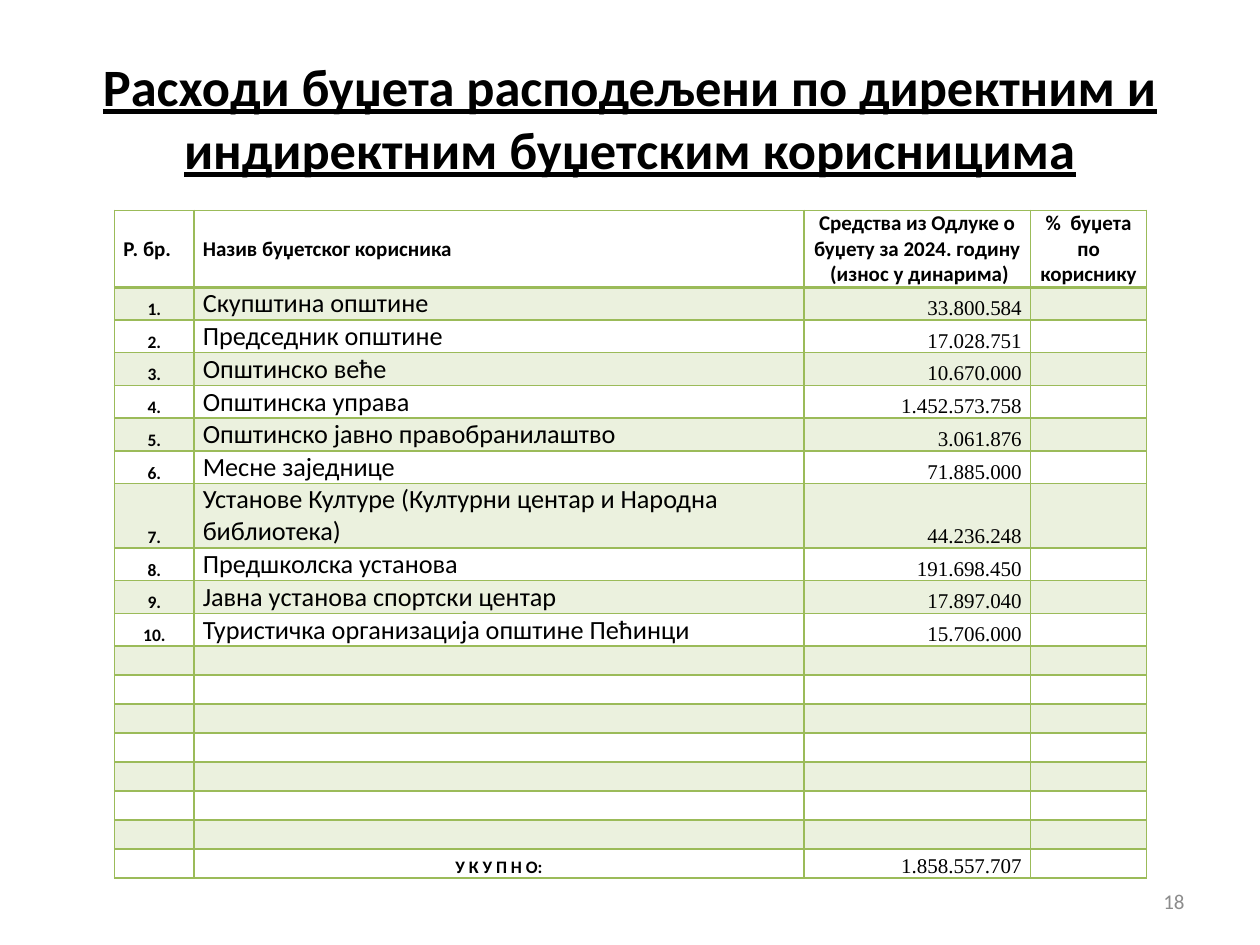
from dataclasses import dataclass

from lxml import etree
from pptx import Presentation
from pptx.dml.color import RGBColor
from pptx.enum.text import MSO_ANCHOR, PP_ALIGN
from pptx.oxml.ns import qn
from pptx.util import Inches, Pt

LEFT, CENTER, RIGHT = PP_ALIGN.LEFT, PP_ALIGN.CENTER, PP_ALIGN.RIGHT
MIDDLE, BOTTOM = MSO_ANCHOR.MIDDLE, MSO_ANCHOR.BOTTOM

BLACK = RGBColor(0x00, 0x00, 0x00)
GRAY = RGBColor(0x8C, 0x8C, 0x8C)
GREEN = RGBColor(0x9B, 0xBB, 0x59)
PALE = RGBColor(0xEB, 0xF1, 0xDE)


@dataclass(frozen=True)
class Style:
    size: float
    align: PP_ALIGN = LEFT
    font: str = "Calibri"
    bold: bool = False
    underline: bool = False
    color: RGBColor = BLACK


TITLE = Style(30, CENTER, bold=True, underline=True)
PAGE = Style(12, RIGHT, color=GRAY)
HEAD = Style(12, bold=True)
HEAD_MID = Style(12, CENTER, bold=True)
MARK = Style(10, CENTER, bold=True)
NAME = Style(15)
SUM = Style(12, RIGHT, "Times New Roman")

HEAD_ROW = ["Р. бр.", "Назив буџетског корисника",
            "Средства из Одлуке о буџету за 2024. годину  (износ у динарима)",
            "%  буџета по кориснику"]
USERS = [
    ("Скупштина општине", "33.800.584"),
    ("Председник општине", "17.028.751"),
    ("Општинско веће", "10.670.000"),
    ("Општинска управа", "1.452.573.758"),
    ("Општинско јавно правобранилаштво", "3.061.876"),
    ("Месне заједнице", "71.885.000"),
    ("Установе Културе (Културни центар и Народна библиотека)", "44.236.248"),
    ("Предшколска установа", "191.698.450"),
    ("Јавна установа спортски центар", "17.897.040"),
    ("Туристичка организација општине Пећинци", "15.706.000"),
]
TOTAL = ["", "У К У П Н О:", "1.858.557.707", ""]
SPARE = 7
COLS = [0.63, 4.84, 1.8, 0.92]
HEAD_H, USER_H, TALL_H, SPARE_H = 0.61, 0.26, 0.51, 0.23
TALL = 6


def write(frame, text: str, style: Style) -> None:
    para = frame.paragraphs[0]
    para.alignment = style.align
    font = para.font
    font.name, font.size = style.font, Pt(style.size)
    font.bold, font.underline = style.bold, style.underline
    font.color.rgb = style.color
    if text:
        para.add_run().text = text
    else:
        # An empty cell takes its line height from the end mark.
        etree.SubElement(para._p, qn("a:endParaRPr"), sz=str(style.size * 100))


def add_text(slide, box: tuple, text: str, style: Style) -> None:
    frame = slide.shapes.add_textbox(*map(Inches, box)).text_frame
    frame.word_wrap = True
    frame.vertical_anchor = MIDDLE
    write(frame, text, style)


def edge(cell, side: str, width: float) -> None:
    line = etree.SubElement(cell._tc.get_or_add_tcPr(), qn(f"a:ln{side}"),
                            w=str(Pt(width)))
    fill = etree.SubElement(line, qn("a:solidFill"))
    etree.SubElement(fill, qn("a:srgbClr"), val=str(GREEN))


def fill_row(table, row: int, texts: list, styles: list) -> None:
    """Write one row, with its borders and banding."""
    head = row == 0
    for col, (text, style) in enumerate(zip(texts, styles)):
        cell = table.cell(row, col)
        cell.margin_left = cell.margin_right = Inches(0.07)
        cell.margin_top = cell.margin_bottom = 0
        cell.vertical_anchor = MIDDLE if head else BOTTOM
        for side in "LRTB":
            heavy = (head and side == "B") or (row == 1 and side == "T")
            edge(cell, side, 2 if heavy else 1)
        if row % 2:
            cell.fill.solid()
            cell.fill.fore_color.rgb = PALE
        else:
            cell.fill.background()
        write(cell.text_frame, text, style)


def add_budget(slide) -> None:
    rows = [[f"{num}.", name, value, ""]
            for num, (name, value) in enumerate(USERS, 1)]
    rows = [HEAD_ROW, *rows, *[[""] * 4] * SPARE, TOTAL]
    heights = [HEAD_H, *[USER_H] * len(USERS), *[SPARE_H] * (SPARE + 1)]
    heights[TALL + 1] = TALL_H
    table = slide.shapes.add_table(
        len(rows), len(COLS), Inches(0.91), Inches(1.67),
        Inches(sum(COLS)), Inches(sum(heights))).table
    table.first_row = table.horz_banding = False
    for col, width in zip(table.columns, COLS):
        col.width = Inches(width)
    for row, height in zip(table.rows, heights):
        row.height = Inches(height)

    fill_row(table, 0, rows[0], [HEAD, HEAD, HEAD_MID, HEAD_MID])
    for index, texts in enumerate(rows[1:], 1):
        label = NAME if 1 <= index <= len(USERS) else MARK
        fill_row(table, index, texts, [MARK, label, SUM, MARK])


def main() -> None:
    deck = Presentation()
    deck.slide_width, deck.slide_height = Inches(10), Inches(7.5)
    slide = deck.slides.add_slide(deck.slide_layouts[6])
    add_text(slide, (0.5, 0.3, 9, 1.25),
             "Расходи буџета расподељени по директним и "
             "индиректним буџетским корисницима", TITLE)
    add_budget(slide)
    add_text(slide, (7.17, 6.95, 2.33, 0.4), "18", PAGE)
    deck.save("out.pptx")


if __name__ == "__main__":
    main()
